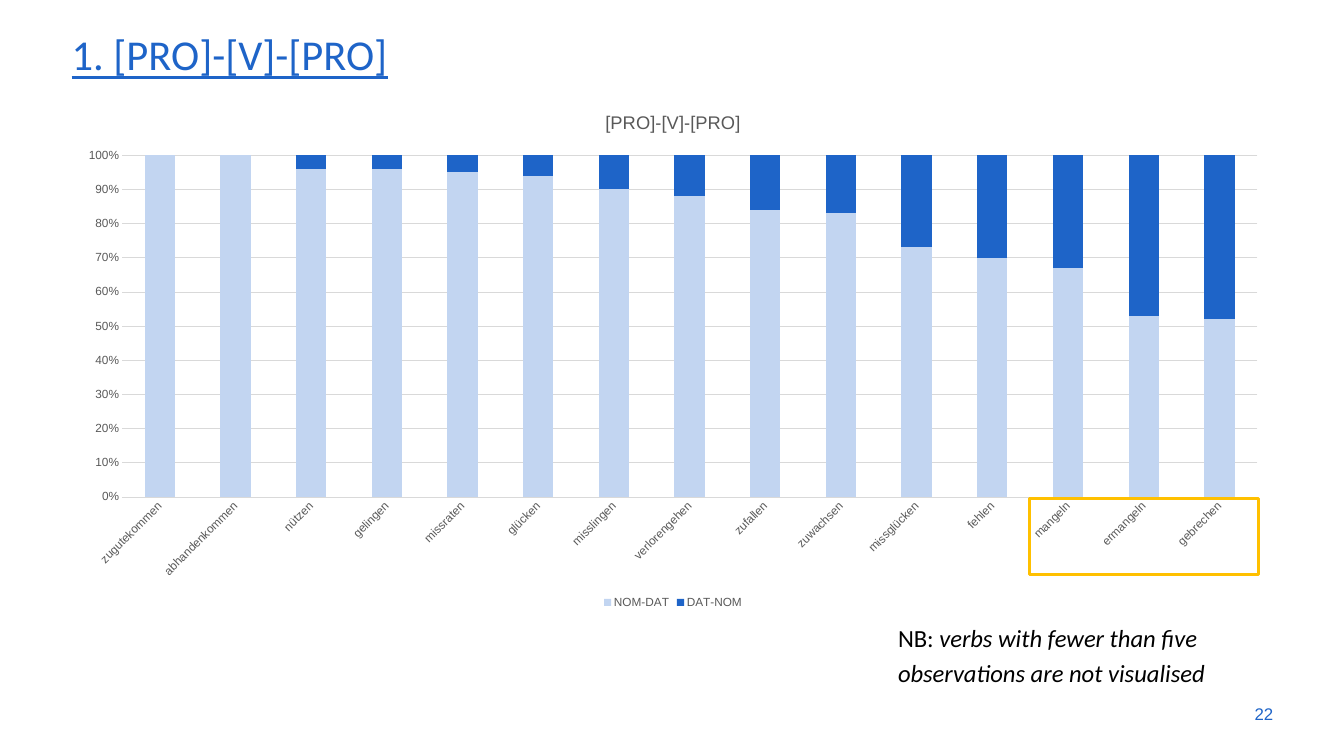
from pptx import Presentation
from pptx.chart.data import CategoryChartData
from pptx.dml.color import RGBColor
from pptx.enum import chart as ch, shapes, text
from pptx.util import Inches, Pt

BLUE, LIGHT, GREY, GRID = "1E64C8", "C2D5F1", "595959", "D9D9D9"
BLACK, AMBER = "000000", "FFC000"

TITLE = "1. [pro]-[v]-[pro]"
CHART_TITLE = "[PRO]-[V]-[PRO]"
PAGE = "22"
NOTE = [("NB: ", False), ("verbs with fewer than five observations are not visualised", True)]
NOM_DAT = {
    "zugutekommen": 100, "abhandenkommen": 100, "nützen": 96, "gelingen": 96,
    "missraten": 95, "glücken": 94, "misslingen": 90, "verlorengehen": 88,
    "zufallen": 84, "zuwachsen": 83, "missglücken": 73, "fehlen": 70,
    "mangeln": 67, "ermangeln": 53, "gebrechen": 52,
}
SERIES = [
    ("NOM-DAT", list(NOM_DAT.values()), LIGHT),
    ("DAT-NOM", [100 - v for v in NOM_DAT.values()], BLUE),
]


def rgb(value):
    return RGBColor.from_string(value)


def style(font, size, color, name="Arial"):
    font.size, font.name, font.bold = Pt(size), name, False
    font.color.rgb = rgb(color)


def box(*at):
    return [Inches(v) for v in at]


def add_text(s, at):
    tf = s.shapes.add_textbox(*box(*at)).text_frame
    tf.word_wrap = True
    return tf, tf.paragraphs[0]


def add_title(s):
    sp = s.shapes.title
    sp.left, sp.top, sp.width, sp.height = box(0.91, 0.28, 17.18, 0.94)
    tf = sp.text_frame
    tf.text = TITLE
    tf.vertical_anchor = text.MSO_ANCHOR.MIDDLE
    p = tf.paragraphs[0]
    p.alignment, p.line_spacing = text.PP_ALIGN.LEFT, 0.9
    r = p.runs[0]
    style(r.font, 54, BLUE, "Calibri")
    r.font.underline = True
    r._r.get_or_add_rPr().set("cap", "small")


def add_verb_chart(s):
    data = CategoryChartData()
    data.categories = list(NOM_DAT)
    for name, values, _ in SERIES:
        data.add_series(name, values)
    chart = s.shapes.add_chart(
        ch.XL_CHART_TYPE.COLUMN_STACKED_100, *box(0.91, 1.31, 17.17, 7.32), data).chart
    style(chart.font, 10, BLACK)

    chart.has_title = True
    chart.chart_title.include_in_layout = False
    tf = chart.chart_title.text_frame
    tf.text = CHART_TITLE
    style(tf.paragraphs[0].runs[0].font, 18.6, GREY)

    plot = chart.plots[0]
    plot.gap_width, plot.overlap, plot.vary_by_categories = 150, 100, False
    for series, (_, _, color) in zip(plot.series, SERIES):
        series.format.fill.solid()
        series.format.fill.fore_color.rgb = rgb(color)

    verbs, share = chart.category_axis, chart.value_axis
    for axis in (verbs, share):
        axis.major_tick_mark = axis.minor_tick_mark = ch.XL_TICK_MARK.NONE
        style(axis.tick_labels.font, 12, GREY)
    verbs._element.txPr.bodyPr.set("rot", "-2700000")
    share.tick_labels.number_format = "0%"
    share.tick_labels.number_format_is_linked = False
    share.format.line.fill.background()
    for line in (verbs.format.line, share.major_gridlines.format.line):
        line.color.rgb = rgb(GRID)
        line.width = Pt(0.75)

    chart.has_legend = True
    chart.legend.position = ch.XL_LEGEND_POSITION.BOTTOM
    chart.legend.include_in_layout = False
    style(chart.legend.font, 12, GREY)


def add_highlight(s):
    sp = s.shapes.add_shape(shapes.MSO_SHAPE.RECTANGLE, *box(14.53, 7.03, 3.23, 1.08))
    sp.shadow.inherit = False
    sp.fill.background()
    sp.line.color.rgb = rgb(AMBER)
    sp.line.width = Pt(3)


def add_page_number(s):
    tf, p = add_text(s, (17.05, 9.79, 1.01, 0.57))
    tf.vertical_anchor = text.MSO_ANCHOR.MIDDLE
    p.text = PAGE
    p.alignment = text.PP_ALIGN.RIGHT
    style(p.runs[0].font, 17.1, BLUE)


def add_note(s):
    _, p = add_text(s, (12.57, 8.66, 5.52, 1.06))
    p.line_spacing = 1.2
    for words, italic in NOTE:
        r = p.add_run()
        r.text = words
        style(r.font, 25, BLACK, "Calibri")
        r.font.italic = italic


def main():
    prs = Presentation()
    prs.slide_width, prs.slide_height = box(18.96, 10.67)
    s = prs.slides.add_slide(prs.slide_layouts[5])
    add_title(s)
    add_verb_chart(s)
    add_page_number(s)
    add_highlight(s)
    add_note(s)
    prs.save("out.pptx")


if __name__ == "__main__":
    main()
